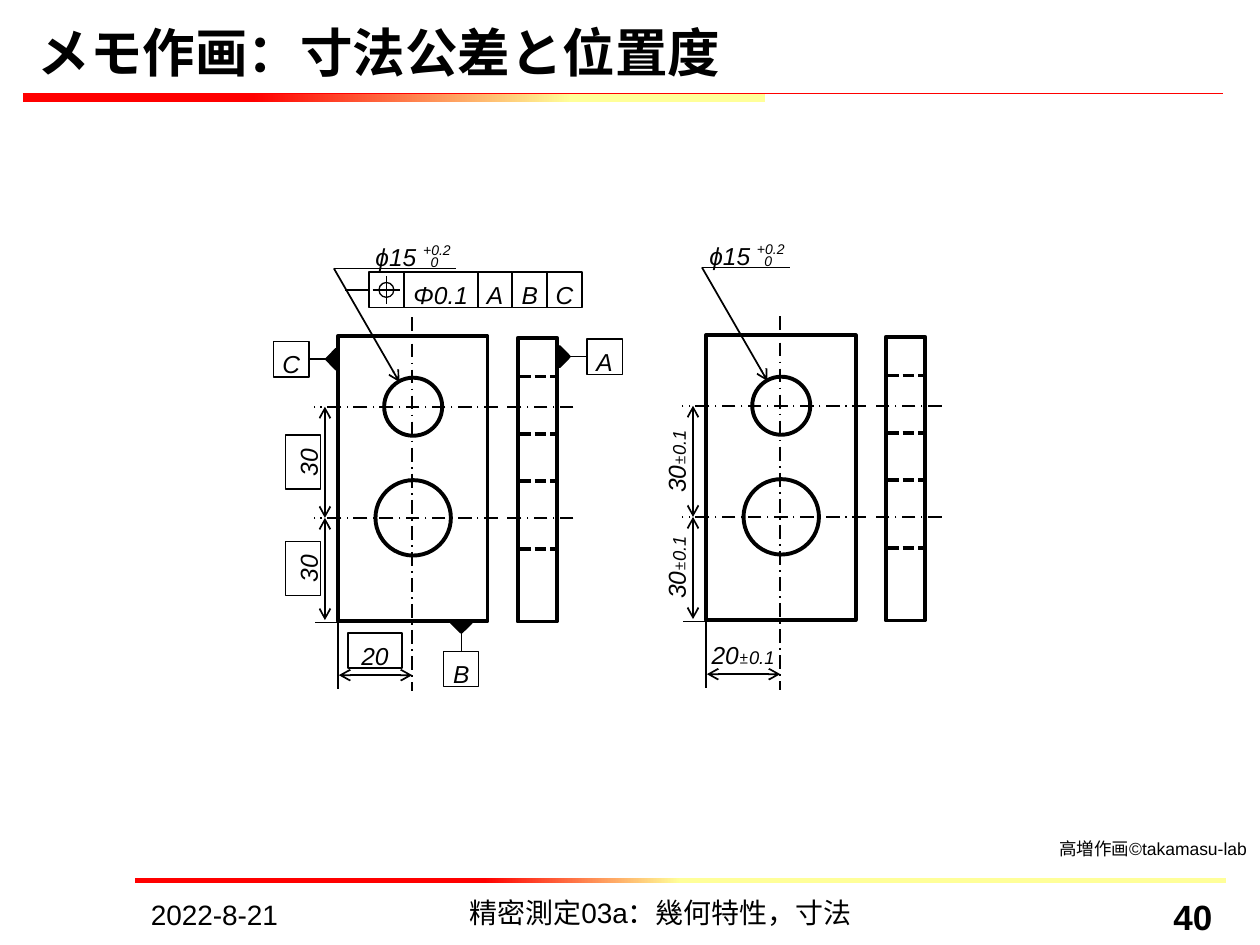
from lxml import etree
from pptx import Presentation
from pptx.dml.color import RGBColor
from pptx.enum.dml import MSO_LINE
from pptx.enum.shapes import MSO_CONNECTOR, MSO_SHAPE
from pptx.enum.text import MSO_ANCHOR, MSO_AUTO_SIZE, PP_ALIGN
from pptx.oxml.ns import qn
from pptx.util import Cm, Pt

BLACK = RGBColor(0x00, 0x00, 0x00)
WHITE = RGBColor(0xFF, 0xFF, 0xFF)
RED = RGBColor(0xFF, 0x00, 0x00)
YELLOW = RGBColor(0xFF, 0xFF, 0x99)

# All lengths are centimetres, all line widths and text sizes points.
TITLE = "メモ作画：寸法公差と位置度"
FOOTERS = [  # text, left, top, width, size, bold, alignment
    ("2022-8-21", 2.79, 17.96, 3.58, 16, False, PP_ALIGN.LEFT),
    ("精密測定03a：幾何特性，寸法", 6.71, 17.93, 13.21, 16, False, PP_ALIGN.CENTER),
    ("40", 20.5, 17.93, 4.19, 20, True, PP_ALIGN.RIGHT),
]
CREDIT = "高増作画©takamasu-lab"
BARS = [  # left, top, width, height, yellow stop, red stop
    (2.72, 17.7, 22, 0.1, 0.5, 0.68),
    (0.46, 1.88, 14.96, 0.18, 0.26, 0.69),
]

# Geometry of the left part; the right part is the same, moved by RIGHT_PART.
RIGHT_PART = (7.42, -0.02)
FRONT_VIEW = (6.81, 6.78, 3.02, 5.74)
SIDE_VIEW = (10.44, 6.81, 0.79, 5.72)
HOLES = [(8.33, 8.2, 1.17), (8.33, 10.44, 1.52)]  # centre x, centre y, diameter
AXES = [(8.31, 6.4, 8.31, 13.92)] + [
    (x1, y, x2, y) for _, y, _ in HOLES for x1, x2 in ((10.03, 6.32), (11.56, 10.19))]
HIDDEN_EDGES = [(10.46, y, 11.25, y) for y in (7.59, 8.74, 9.7, 11.07)]
EXTENSIONS = [(7.24, 12.55, 6.35, 12.55), (6.81, 11.96, 6.81, 13.89)]
DIMENSION_LINES = [(6.55, 10.44, 6.55, 8.2), (6.55, 12.5, 6.55, 10.44),
                   (8.31, 13.61, 6.83, 13.61)]
DIMENSIONS = [("30", 6.11, 9.32, 270), ("30", 6.11, 11.46, 270), ("20", 7.56, 13.11, 0)]
DIAMETER, UPPER, LOWER = "ϕ15", "+0.2", "0"
PLUS_MINUS, DEVIATION = "±", "0.1"

FRAME_LEFT, FRAME_TOP, CELL = 7.44, 5.49, 0.71
FRAME_CELLS = [("", 0.7), ("Φ0.1", 1.49), ("A", 0.7), ("B", 0.7), ("C", 0.7)]
DATUMS = [  # letter, box centre, triangle centre, rotation, box side, weight
    ("A", (12.19, 7.19), (11.38, 7.19), 90, 1, 0.75),
    ("B", (9.3, 13.49), (9.3, 12.65), 180, 0, 0.75),
    ("C", (5.87, 7.24), (6.68, 7.24), 270, 3, 1),
]

prs = Presentation()
prs.slide_width, prs.slide_height = Cm(25.4), Cm(19.05)
slide = prs.slides.add_slide(prs.slide_layouts[5])
shapes = slide.shapes


def format_run(run, size, italic=False, bold=False, font="Arial"):
    run.font.size, run.font.name = Pt(size), font
    run.font.italic, run.font.bold = italic, bold
    run.font.color.rgb = BLACK


def add_line(x1, y1, x2, y2, weight=1, dash=None, arrows=(), color=BLACK):
    line = shapes.add_connector(MSO_CONNECTOR.STRAIGHT, Cm(x1), Cm(y1), Cm(x2), Cm(y2))
    line.line.color.rgb, line.line.width = color, Pt(weight)
    if dash:
        line.line.dash_style = dash
    for end in arrows:
        etree.SubElement(line.line._get_or_add_ln(), qn(f"a:{end}"), type="arrow")
    etree.SubElement(line._element.spPr, qn("a:effectLst"))
    return line


def add_outline(kind, left, top, width, height, weight=1.0, fill=None):
    """Preset shape; a weight of 0 leaves the line out."""
    shape = shapes.add_shape(kind, Cm(left), Cm(top), Cm(width), Cm(height))
    shape.shadow.inherit = False
    if fill is None:
        shape.fill.background()
    else:
        shape.fill.solid()
        shape.fill.fore_color.rgb = fill
    if weight:
        shape.line.color.rgb, shape.line.width = BLACK, Pt(weight)
    else:
        shape.line.fill.background()
    return shape


def add_centred(kind, x, y, width, height, weight=1.0, fill=None):
    return add_outline(kind, x - width / 2, y - height / 2, width, height, weight, fill)


def write_label(box, label):
    frame = box.text_frame
    frame.word_wrap, frame.vertical_anchor = False, MSO_ANCHOR.TOP
    frame.margin_left = frame.margin_right = Cm(0.1)
    frame.margin_top, frame.margin_bottom = Cm(0.16), 0
    paragraph = frame.paragraphs[0]
    paragraph.text, paragraph.alignment = label, PP_ALIGN.CENTER
    for run in paragraph.runs:
        format_run(run, 14, italic=True)
    return paragraph


def add_text(left, top, width, height, text, size, wrap=True, **style):
    box = shapes.add_textbox(Cm(left), Cm(top), Cm(width), Cm(height))
    box.text_frame.text, box.text_frame.word_wrap = text, wrap
    for paragraph in box.text_frame.paragraphs:
        for run in paragraph.runs:
            format_run(run, size, **style)
    return box.text_frame


def add_part(dx, dy, toleranced):
    """Plate in two views; toleranced dimensions carry ± values instead of a frame."""
    def moved(line):
        x1, y1, x2, y2 = line
        return x1 + dx, y1 + dy, x2 + dx, y2 + dy

    for (left, top, width, height), fill in ((FRONT_VIEW, None), (SIDE_VIEW, WHITE)):
        add_outline(MSO_SHAPE.RECTANGLE, left + dx, top + dy, width, height, 2.25, fill)
    for x, y, diameter in HOLES:
        add_centred(MSO_SHAPE.OVAL, x + dx, y + dy, diameter, diameter, 2.25)
    for axis in AXES:
        add_line(*moved(axis), dash=MSO_LINE.LONG_DASH_DOT)
    for edge in HIDDEN_EDGES:
        add_line(*moved(edge), weight=2.25, dash=MSO_LINE.SQUARE_DOT)
    for extension in EXTENSIONS:
        add_line(*moved(extension))
    for dimension_line in DIMENSION_LINES:
        add_line(*moved(dimension_line), arrows=("headEnd", "tailEnd"))
    for value, x, y, rotation in DIMENSIONS:
        box = add_centred(MSO_SHAPE.RECTANGLE, x + dx, y + dy, 1.09, CELL,
                          0 if toleranced else 1, WHITE)
        box.rotation = rotation
        paragraph = write_label(box, value)
        if toleranced:
            for text, font in ((PLUS_MINUS, "Cambria"), (DEVIATION, "Arial")):
                run = paragraph.add_run()
                run.text = text
                format_run(run, 10.5, italic=font == "Arial", font=font)

    shift = dx - 0.69 if toleranced else dx
    add_line(8.05 + dx, 7.7 + dy, 6.73 + dx, 5.41 + dy, arrows=("headEnd",))
    add_line(9.19 + shift, 5.41 + dy, 6.73 + dx, 5.41 + dy)
    add_text(7.32 + shift, 4.75 + dy, 1.35, 0.86, DIAMETER, 14, wrap=False, italic=True)
    limits = add_text(8.28 + shift, 4.83 + dy, 1.12, 0.76, f"{UPPER}\n{LOWER}", 8,
                      wrap=False, italic=True)
    for paragraph in limits.paragraphs:
        paragraph.line_spacing = Pt(7)
    limits.paragraphs[1]._p.get_or_add_pPr().set("marL", str(Cm(0.15)))


def add_tolerance_frame():
    left, middle = FRAME_LEFT, FRAME_TOP + CELL / 2
    leader = add_line(6.96, middle, FRAME_LEFT, middle)
    for index, (label, width) in enumerate(FRAME_CELLS):
        cell = add_outline(MSO_SHAPE.RECTANGLE, left, FRAME_TOP, width, CELL, 1, WHITE)
        if index == 0:
            leader.end_connect(cell, 1)
            x = left + width / 2
            add_centred(MSO_SHAPE.OVAL, x, middle, 0.3, 0.3, 0.75)
            add_line(x - 0.28, middle, x + 0.28, middle, 0.75)
            add_line(x, middle - 0.28, x, middle + 0.28, 0.75)
        else:
            write_label(cell, label)
        left += width


def add_datum(letter, box_centre, triangle_centre, rotation, side, weight):
    triangle = add_centred(MSO_SHAPE.ISOSCELES_TRIANGLE, *triangle_centre, 0.41, 0.2, 1.5, BLACK)
    triangle.rotation = rotation
    box = add_centred(MSO_SHAPE.RECTANGLE, *box_centre, CELL, CELL, weight, WHITE)
    write_label(box, letter)
    add_line(*triangle_centre, *box_centre, weight).end_connect(box, side)


for left, top, width, height, yellow_stop, red_stop in BARS:
    bar = add_outline(MSO_SHAPE.RECTANGLE, left, top, width, height, 0)
    bar.fill.gradient()
    bar.fill.gradient_angle = 180
    for stop, color, position in zip(bar.fill.gradient_stops, (YELLOW, RED),
                                     (yellow_stop, red_stop)):
        stop.color.rgb, stop.position = color, position
add_line(0.46, 1.88, 24.66, 1.88, 0.75, color=RED)

add_part(0, 0, toleranced=False)
add_tolerance_frame()
for datum in DATUMS:
    add_datum(*datum)
add_part(*RIGHT_PART, toleranced=True)

title = shapes.title
title.left, title.top, title.width, title.height = Cm(0.51), Cm(0.53), Cm(24.2), Cm(1.27)
title.text_frame.text = TITLE
title.text_frame.auto_size = MSO_AUTO_SIZE.NONE
title.text_frame.vertical_anchor = MSO_ANCHOR.BOTTOM
title.text_frame.paragraphs[0].alignment = PP_ALIGN.LEFT
format_run(title.text_frame.paragraphs[0].runs[0], 30, bold=True)

for text, left, top, width, size, bold, alignment in FOOTERS:
    footer = add_text(left, top, width, 0.75, text, size, bold=bold)
    footer.paragraphs[0].alignment = alignment
credit = add_text(21.26, 16.79, 4.01, 0.64, CREDIT, 10)
credit.margin_left = credit.margin_right = credit.margin_top = credit.margin_bottom = Cm(0.1)

prs.save("out.pptx")
